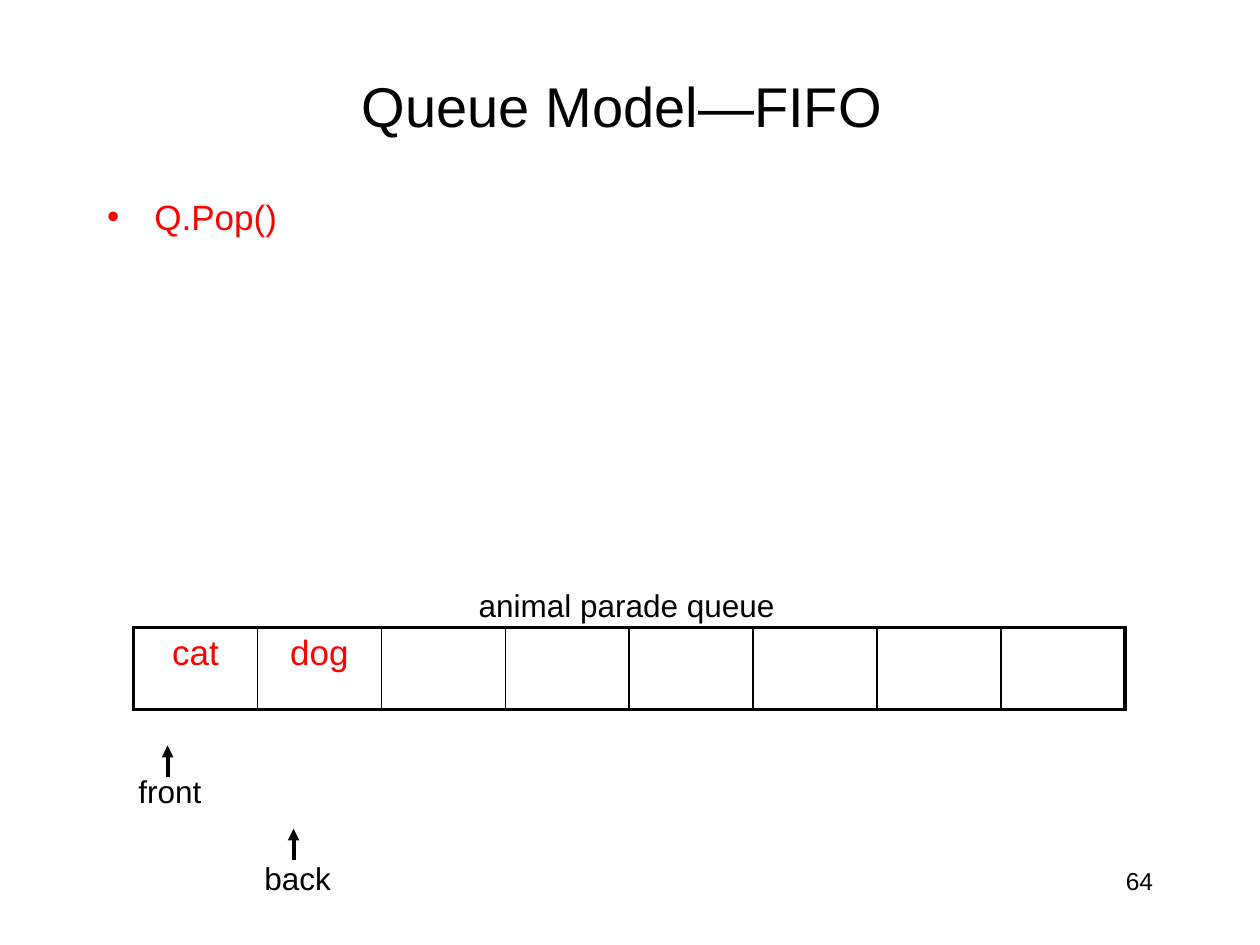
from collections import namedtuple
from dataclasses import dataclass

from lxml.etree import SubElement
from pptx import Presentation
from pptx.dml.color import RGBColor
from pptx.enum.shapes import MSO_CONNECTOR as Link
from pptx.enum.text import MSO_ANCHOR as Anchor, MSO_AUTO_SIZE as Fit, PP_ALIGN as Align
from pptx.oxml import parse_xml
from pptx.oxml.ns import nsdecls, qn
from pptx.util import Inches, Pt

Box = namedtuple("Box", "x y w h")


@dataclass(frozen=True)
class Theme:
    font: str = "Arial"
    ink: str = "000000"
    mark: str = "FF0000"
    title: int = 32
    body: int = 20
    label: int = 18
    page: int = 14
    thick: float = 2.25
    thin: float = 1


THEME = Theme()
WIDE, HIGH = Inches(10), Inches(7.5)


def area(x, y, w, h):
    """Turn shares of the slide into a box of lengths."""
    return Box(int(x * WIDE), int(y * HIGH), int(w * WIDE), int(h * HIGH))


def write(frame, text, size=THEME.label, color=THEME.ink, align=Align.LEFT, before=None):
    para = frame.paragraphs[0]
    para.alignment = align
    if before is not None:
        para.space_before = Pt(before)
    run = para.add_run()
    run.text = text
    run.font.name = THEME.font
    run.font.size = Pt(size)
    run.font.color.rgb = RGBColor.from_string(color)


def label(shapes, box, text, wrap=False, **form):
    frame = shapes.add_textbox(*box).text_frame
    frame.word_wrap = wrap
    frame.auto_size = Fit.NONE if wrap else Fit.SHAPE_TO_FIT_TEXT
    write(frame, text, **form)


def fill(holder, box, text, anchor, **form):
    """Move a placeholder to the box and set its text."""
    holder.left, holder.top, holder.width, holder.height = box
    frame = holder.text_frame
    frame.auto_size = Fit.NONE
    frame.vertical_anchor = anchor
    write(frame, text, **form)


def edge(cell, sides):
    """Draw cell borders; sides maps L, R, T, B to widths in points."""
    props = cell._tc.get_or_add_tcPr()
    for spot, side in enumerate("LRTB"):
        props.insert(spot, parse_xml(
            f'<a:ln{side} {nsdecls("a")} w="{Pt(sides[side])}"><a:solidFill>'
            f'<a:srgbClr val="{THEME.ink}"/></a:solidFill></a:ln{side}>'))


def queue(slide, box, name, items, slots):
    """Place a row of slots, with its name centred above."""
    tall = Inches(0.4)
    span = Inches(2.55)
    left = box.x + (box.w - span) // 2 - Inches(0.02)
    table = slide.shapes.add_table(1, slots, *box).table
    table.first_row = table.horz_banding = False
    table.rows[0].height = box.h
    for col in range(slots):
        table.columns[col].width = box.w // slots
        cell = table.cell(0, col)
        cell.fill.background()
        edge(cell, {"L": THEME.thin if col else THEME.thick,
                    "R": THEME.thin if col < slots - 1 else THEME.thick,
                    "T": THEME.thick, "B": THEME.thick})
        if col < len(items):
            write(cell.text_frame, items[col], size=THEME.body, color=THEME.mark,
                  align=Align.CENTER, before=THEME.body * 0.2)
    label(slide.shapes, Box(left, box.y - tall + Inches(0.02), span, tall), name)


def marker(slide, box, text):
    """Group an upward arrow at the top of the box with a label at its foot."""
    group = slide.shapes.add_group_shape().shapes
    tall = Inches(0.4)
    label(group, Box(box.x, box.y + box.h - tall, box.w, tall), text)
    mid = box.x + Inches(0.33)
    arrow = group.add_connector(Link.STRAIGHT, mid, box.y + Inches(0.25), mid, box.y)
    arrow.line.width = Pt(THEME.thick)
    arrow.line.color.rgb = RGBColor.from_string(THEME.ink)
    SubElement(arrow.line._get_or_add_ln(), qn("a:tailEnd"), type="triangle")
    SubElement(arrow._element.spPr, qn("a:effectLst"))


def main():
    deck = Presentation()
    deck.slide_width, deck.slide_height = WIDE, HIGH
    slide = deck.slides.add_slide(deck.slide_layouts[1])
    title, body = slide.placeholders
    fill(title, area(0.075, 0.056, 0.85, 0.11), "Queue Model—FIFO ", Anchor.MIDDLE,
         size=THEME.title, align=Align.CENTER)
    fill(body, area(0.075, 0.2, 0.85, 0.333), "Q.Pop()", Anchor.TOP,
         size=THEME.body, color=THEME.mark)
    label(slide.shapes, area(0.717, 0.91, 0.208, 0.067), "64", wrap=True,
          size=THEME.page, align=Align.RIGHT)
    queue(slide, area(0.106, 0.664, 0.787, 0.087), "animal parade queue", ["cat", "dog"], 8)
    marker(slide, area(0.1, 0.789, 0.07, 0.075), "front")
    marker(slide, area(0.2, 0.877, 0.073, 0.079), "back")
    deck.save("out.pptx")


if __name__ == "__main__":
    main()
